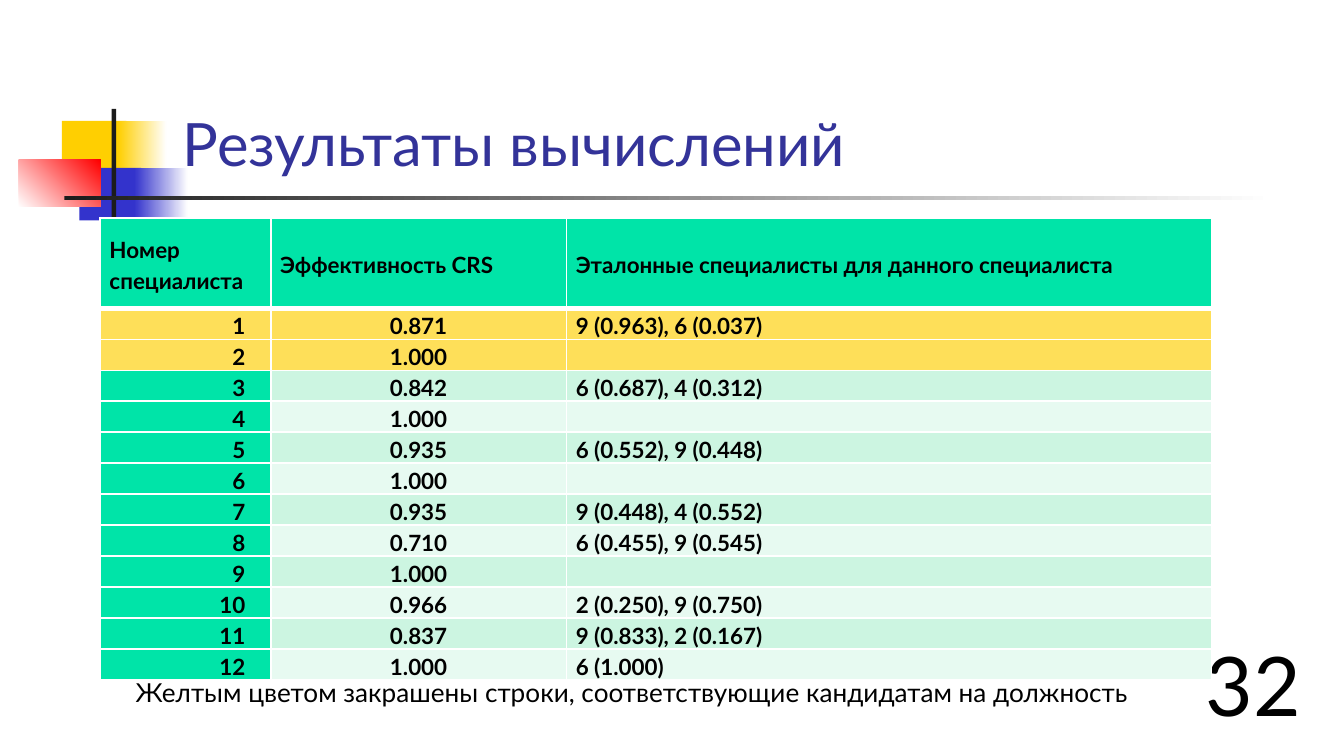
from lxml import etree
from pptx import Presentation
from pptx import util as u
from pptx.dml.color import RGBColor
from pptx.enum import shapes, text
from pptx.oxml.ns import qn

# The slide is a 16:9 grid of 100 columns; rows have the same size as columns
COLS, ROWS = 100, 56.25
CELL = u.Inches(0.1)
FONT = "Lato"
BLACK, WHITE, NAVY, BLUE = "000000", "FFFFFF", "333399", "3333CC"
GOLD, RED, DARK = "FFCF01", "FF0000", "1C1C1C"
GREEN, MINT, PALE, YELLOW = "00E4A8", "CCF5E1", "E7FAF1", "FEDF59"
LEFT, RIGHT, CENTER, JUSTIFY = (text.PP_ALIGN.LEFT, text.PP_ALIGN.RIGHT,
                                text.PP_ALIGN.CENTER, text.PP_ALIGN.JUSTIFY)
TOP, MIDDLE, BOTTOM = (text.MSO_ANCHOR.TOP, text.MSO_ANCHOR.MIDDLE,
                       text.MSO_ANCHOR.BOTTOM)

HEADER = ["Номер специалиста", "Эффективность CRS",
          "Эталонные специалисты для данного специалиста"]
RESULTS = [
    ("0.871", "9 (0.963), 6 (0.037)"),
    ("1.000", ""),
    ("0.842", "6 (0.687), 4 (0.312)"),
    ("1.000", ""),
    ("0.935", "6 (0.552), 9 (0.448)"),
    ("1.000", ""),
    ("0.935", "9 (0.448), 4 (0.552)"),
    ("0.710", "6 (0.455), 9 (0.545)"),
    ("1.000", ""),
    ("0.966", "2 (0.250), 9 (0.750)"),
    ("0.837", "9 (0.833), 2 (0.167)"),
    ("1.000", "6 (1.000)"),
]
CANDIDATES = (1, 2)


def color(value):
    return RGBColor.from_string(value)


def grid(*lengths):
    return [round(n * CELL) for n in lengths]


def place(sp, box):
    sp.left, sp.top, sp.width, sp.height = grid(*box)


def write(tf, words, size=12, fill=BLACK, bold=False, align=LEFT,
          anchor=TOP, spacing=None):
    tf.word_wrap = True
    tf.vertical_anchor = anchor
    p = tf.paragraphs[0]
    p.alignment = align
    p.line_spacing = spacing
    if words:
        r = p.add_run()
        r.text = words
        r.font.name, r.font.size, r.font.bold = FONT, u.Pt(size), bold
        r.font.color.rgb = color(fill)
    else:
        # An empty cell keeps the row height of its neighbours
        p._p.get_or_add_endParaRPr().set("sz", str(size * 100))
    return p


def add_block(s, box, start, end=None, angle=0):
    sp = s.shapes.add_shape(shapes.MSO_SHAPE.RECTANGLE, *grid(*box))
    sp.shadow.inherit = False
    sp.line.fill.background()
    if end is None:
        sp.fill.solid()
        sp.fill.fore_color.rgb = color(start)
    else:
        sp.fill.gradient()
        sp.fill.gradient_angle = angle
        for stop, value in zip(sp.fill.gradient_stops, (start, end)):
            stop.color.rgb = color(value)


def add_ornament(s, box):
    """Overlapping squares with a cross of two rules."""
    x, y, w, h = box
    add_block(s, (x + 3.2, y + 0.9, 4.8, 3.9), GOLD)
    add_block(s, (x + 7.4, y + 0.9, 3.6, 3.9), GOLD, WHITE)
    add_block(s, (x + 4.5, y + 4.4, 4.6, 3.9), BLUE)
    add_block(s, (x + 8.6, y + 4.4, 4, 3.9), BLUE, WHITE)
    add_block(s, (x, y + 3.8, 6.1, 3.5), WHITE, RED, angle=45)
    add_block(s, (x + 6.9, y, 0.35, h), DARK)
    add_block(s, (x + 3.4, y + 6.5, w - 3.4, 0.3), DARK, WHITE)


def add_title(s, box, words):
    sp = s.shapes.title
    place(sp, box)
    sp.text_frame.auto_size = text.MSO_AUTO_SIZE.NONE
    write(sp.text_frame, words, size=32, fill=NAVY, anchor=BOTTOM)


def add_note(s, box, words):
    sp = s.placeholders[1]
    place(sp, box)
    sp.text_frame.auto_size = text.MSO_AUTO_SIZE.NONE
    p = write(sp.text_frame, words, size=14, anchor=BOTTOM)
    pPr = p._p.get_or_add_pPr()
    pPr.set("marL", "0")
    pPr.set("indent", "0")
    etree.SubElement(pPr, qn("a:buNone"))


def add_page_number(s, box, number):
    sp = s.shapes.add_textbox(*grid(*box))
    write(sp.text_frame, str(number), size=44, align=RIGHT, anchor=BOTTOM)


def set_borders(cell, top=1, bottom=1):
    tcPr = cell._tc.get_or_add_tcPr()
    widths = {"L": 1, "R": 1, "T": top, "B": bottom}
    for i, (side, width) in enumerate(widths.items()):
        ln = etree.Element(qn(f"a:ln{side}"), w=str(u.Pt(width)))
        fill = etree.SubElement(ln, qn("a:solidFill"))
        etree.SubElement(fill, qn("a:srgbClr"), val=WHITE)
        tcPr.insert(i, ln)


def cell_fill(row, col):
    if row in CANDIDATES:
        return YELLOW
    if row == 0 or col == 0:
        return GREEN
    return MINT if row % 2 else PALE


def add_results(s, box, col_widths, head_height):
    rows = [HEADER] + [(str(n), *result) for n, result in enumerate(RESULTS, 1)]
    table = s.shapes.add_table(len(rows), len(HEADER), *grid(*box)).table
    for col, width in zip(table.columns, grid(*col_widths)):
        col.width = width
    row_height = (box[3] - head_height) / len(RESULTS)
    for i, values in enumerate(rows):
        head = i == 0
        table.rows[i].height = grid(head_height if head else row_height)[0]
        aligns = (JUSTIFY, LEFT, LEFT) if head else (RIGHT, CENTER, LEFT)
        for j, (words, align) in enumerate(zip(values, aligns)):
            cell = table.cell(i, j)
            cell.fill.solid()
            cell.fill.fore_color.rgb = color(cell_fill(i, j))
            cell.margin_top = cell.margin_bottom = 0
            cell.margin_left, cell.margin_right = grid(
                0.7, 1.9 if i and j == 0 else 0.7)
            cell.vertical_anchor = MIDDLE if head else BOTTOM
            write(cell.text_frame, words, bold=True, align=align,
                  anchor=None, spacing=1.15)
            set_borders(cell, top=3 if i == 1 else 1, bottom=3 if head else 1)


def main():
    prs = Presentation()
    prs.slide_width, prs.slide_height = grid(COLS, ROWS)
    s = prs.slides.add_slide(prs.slide_layouts[1])

    # Heading
    add_ornament(s, (1.4, 8.1, 93.4, 8.6))
    add_title(s, (12.6, 7.7, 85.2, 6.1), "Результаты вычислений")

    # Results with the note below them
    add_note(s, (9.1, 17.1, 85, 36.1),
             "Желтым цветом закрашены строки, соответствующие "
             "кандидатам на должность")
    add_page_number(s, (77, 51.2, 20.8, 3.8), 32)
    add_results(s, (7.45, 16.2, 82.7, 34.4), (12.7, 22, 48), 6.75)

    prs.save("out.pptx")


if __name__ == "__main__":
    main()
